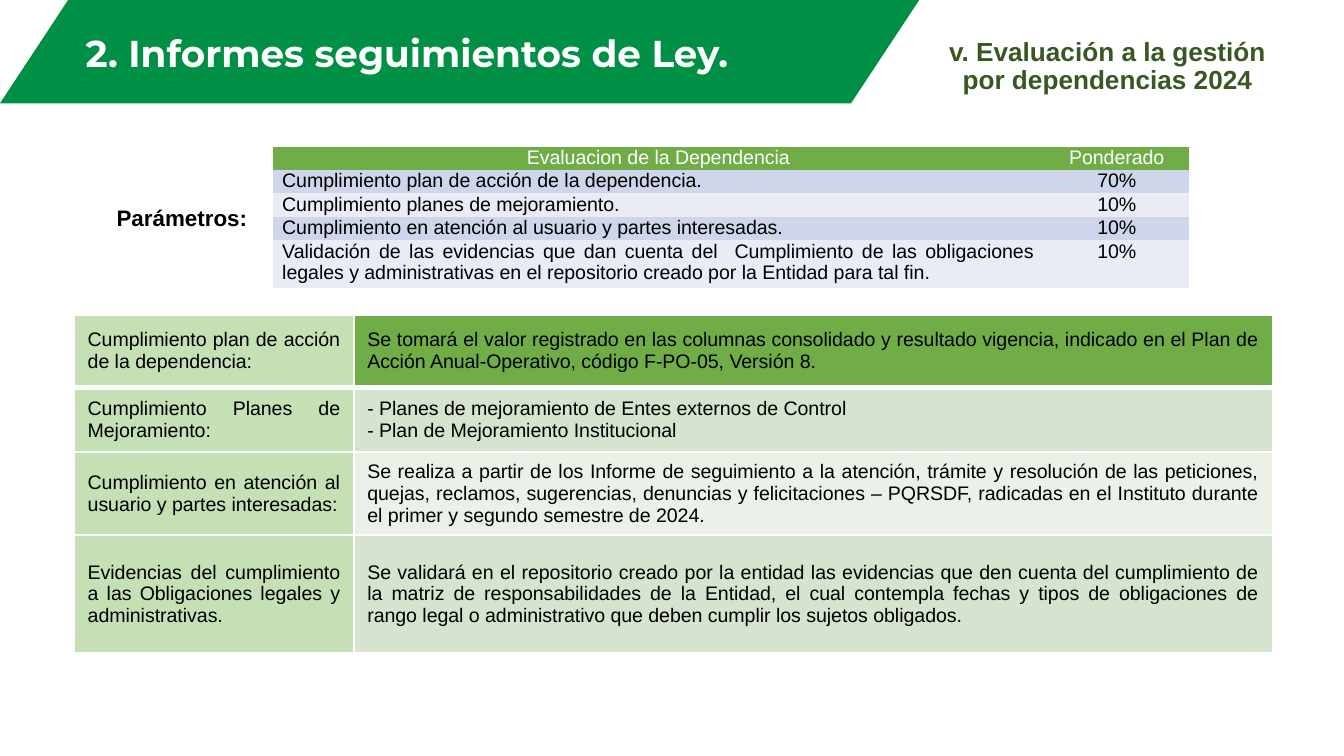
from lxml import etree
from pptx import Presentation
from pptx.dml import color
from pptx.enum import shapes, text
from pptx.oxml import ns
from pptx.util import Pt

COLORS = {
    "banner": "009045", "header": "70AD47", "label": "C5E0B4", "heading": "385723",
    "sage": "D5E3CF", "pale": "EBF1E9", "blue": "CFD5EA", "light": "E9EBF5",
    "white": "FFFFFF", "black": "000000",
}
TITLE = "2. Informes seguimientos de Ley."
SUBTITLE = "v. Evaluación a la gestión por dependencias 2024"
PARAMETERS = "Parámetros:"
WEIGHTS = [
    ("Evaluacion de la Dependencia", "Ponderado"),
    ("Cumplimiento plan de acción de la dependencia.", "70%"),
    ("Cumplimiento planes de mejoramiento.", "10%"),
    ("Cumplimiento en atención al usuario y partes interesadas.", "10%"),
    ("Validación de las evidencias que dan cuenta del  Cumplimiento de las obligaciones "
     "legales y administrativas en el repositorio creado por la Entidad para tal fin.", "10%"),
]
CRITERIA = [
    ("Cumplimiento plan de acción de la dependencia:",
     "Se tomará el valor registrado en las columnas consolidado y resultado vigencia, "
     "indicado en el Plan de Acción Anual-Operativo, código F-PO-05, Versión 8."),
    ("Cumplimiento Planes de Mejoramiento:",
     "- Planes de mejoramiento de Entes externos de Control\n"
     "- Plan de Mejoramiento Institucional"),
    ("Cumplimiento en atención al usuario y partes interesadas:",
     "Se realiza a partir de los Informe de seguimiento a la atención, trámite y resolución "
     "de las peticiones, quejas, reclamos, sugerencias, denuncias y felicitaciones – PQRSDF, "
     "radicadas en el Instituto durante el primer y segundo semestre de 2024."),
    ("Evidencias del cumplimiento a las Obligaciones legales y administrativas.",
     "Se validará en el repositorio creado por la entidad las evidencias que den cuenta del "
     "cumplimiento de la matriz de responsabilidades de la Entidad, el cual contempla fechas "
     "y tipos de obligaciones de rango legal o administrativo que deben cumplir los sujetos "
     "obligados."),
]
PLAIN_STYLE = "{2D5ABB26-0587-4C30-8999-92F81FD0307C}"
CENTER, JUSTIFY = text.PP_ALIGN.CENTER, text.PP_ALIGN.JUSTIFY
TOP, MIDDLE = text.MSO_ANCHOR.TOP, text.MSO_ANCHOR.MIDDLE


def rgb(name):
    return color.RGBColor.from_string(COLORS[name])


def write(frame, content, size=10.5, font="Arial", ink="black", bold=False,
          align=JUSTIFY, spacing=1.0):
    frame.word_wrap = True
    frame.text = content
    for paragraph in frame.paragraphs:
        paragraph.alignment = align
        paragraph.line_spacing = spacing
        for run in paragraph.runs:
            run.font.size, run.font.name, run.font.bold = Pt(size), font, bold
            run.font.color.rgb = rgb(ink)


def place(shape, left, top, width, height):
    shape.left, shape.top, shape.width, shape.height = map(Pt, (left, top, width, height))
    shape.text_frame.auto_size = text.MSO_AUTO_SIZE.NONE
    shape.text_frame.vertical_anchor = TOP


def make_table(slide, box, widths, heights):
    table = slide.shapes.add_table(len(heights), len(widths), *map(Pt, box)).table
    table._tbl.tblPr.find(ns.qn("a:tableStyleId")).text = PLAIN_STYLE
    for column, width in zip(table.columns, widths):
        column.width = Pt(width)
    for row, height in zip(table.rows, heights):
        row.height = Pt(height)
    return table


def fill_cell(cell, fill, anchor):
    cell.fill.solid()
    cell.fill.fore_color.rgb = rgb(fill)
    cell.vertical_anchor = anchor


def add_borders(cell, **widths):
    properties = cell._tc.get_or_add_tcPr()
    for position, (side, width) in enumerate(widths.items()):
        line = etree.Element(ns.qn(f"a:ln{side}"), w=str(Pt(width)))
        solid = etree.SubElement(line, ns.qn("a:solidFill"))
        etree.SubElement(solid, ns.qn("a:srgbClr"), val=COLORS["white"])
        properties.insert(position, line)


def build_weights(slide):
    table = make_table(slide, (146.2, 78.5, 491, 75.6), (413.2, 77.8), [12.6] * 4 + [25.2])
    for r, row in enumerate(WEIGHTS):
        fill = ("light", "blue")[r % 2] if r else "header"
        for c, content in enumerate(row):
            cell = table.cell(r, c)
            cell.margin_left = cell.margin_right = Pt(5)
            cell.margin_top = cell.margin_bottom = 0
            fill_cell(cell, fill, TOP)
            write(cell.text_frame, content, ink="black" if r else "white",
                  align=JUSTIFY if r and c == 0 else CENTER)


def build_criteria(slide):
    table = make_table(slide, (39.8, 168.6, 642.2, 181.4), (149.8, 492.4),
                       (38.9, 34.6, 44.6, 63.3))
    for r, row in enumerate(CRITERIA):
        detail = ("pale", "sage")[r % 2] if r else "header"
        for c, content in enumerate(row):
            cell = table.cell(r, c)
            fill_cell(cell, detail if c else "label", MIDDLE)
            write(cell.text_frame, content)
            add_borders(cell, L=1, R=1, T=3 if r == 1 else 1, B=1 if r else 3)


def main():
    deck = Presentation()
    deck.slide_width, deck.slide_height = Pt(720), Pt(405)
    slide = deck.slides.add_slide(deck.slide_layouts[5])

    banner = slide.shapes.add_shape(shapes.MSO_SHAPE.PARALLELOGRAM, 0, 0, Pt(492.5), Pt(55.4))
    banner.adjustments[0] = 0.66
    banner.shadow.inherit = False
    banner.fill.solid()
    banner.fill.fore_color.rgb = rgb("banner")
    banner.line.fill.background()

    title = slide.shapes.title
    banner._element.addnext(title._element)
    place(title, 3.6, 15.1, 429.1, 28.8)
    write(title.text_frame, TITLE, size=20, font="Montserrat", ink="white", bold=True,
          align=CENTER, spacing=0.9)

    subtitle = slide.shapes.add_textbox(0, 0, 0, 0)
    place(subtitle, 488.2, 17.3, 210.2, 38.2)
    write(subtitle.text_frame, SUBTITLE, size=14, ink="heading", bold=True,
          align=CENTER, spacing=0.9)

    parameters = slide.shapes.add_textbox(0, 0, 0, 0)
    place(parameters, 55.4, 105.8, 90.7, 21.6)
    write(parameters.text_frame, PARAMETERS, size=12, bold=True)

    build_criteria(slide)
    build_weights(slide)
    deck.save("out.pptx")


if __name__ == "__main__":
    main()
